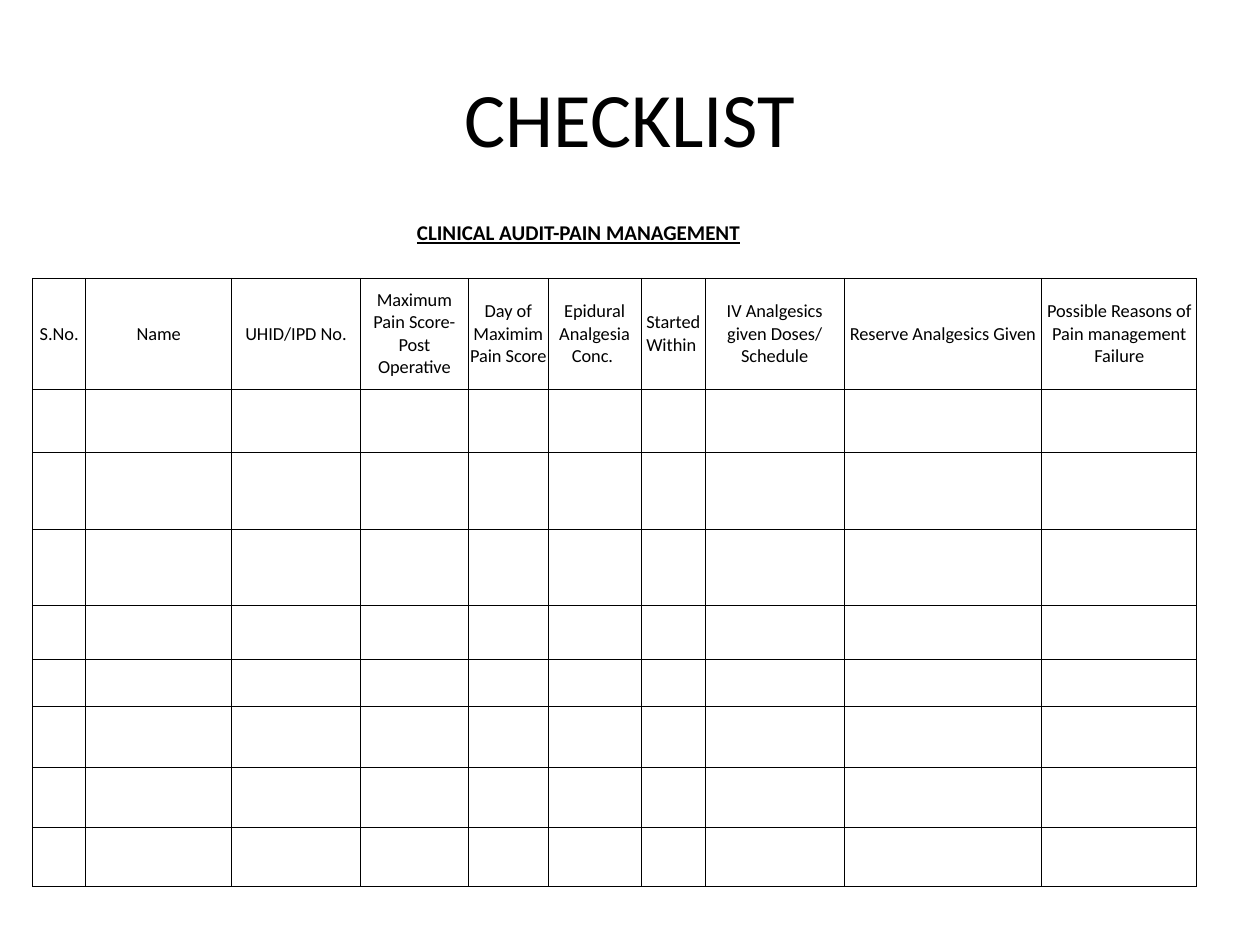
from lxml import etree
from pptx import Presentation
from pptx.dml.color import RGBColor
from pptx.enum import text
from pptx.oxml.ns import qn
from pptx.util import Inches, Pt

FONT = "Calibri"
BLACK = "000000"
NO_STYLE = "{2D5ABB26-0587-4C30-8999-92F81FD0307C}"

HEADINGS = [
    "S.No.", "Name", "UHID/IPD No.", "Maximum Pain Score-Post Operative",
    "Day of Maximim Pain Score", "Epidural Analgesia Conc. ", "Started Within ",
    "IV Analgesics given Doses/ Schedule", "Reserve Analgesics Given",
    "Possible Reasons of Pain management Failure",
]
COLUMN_WIDTHS = [0.42, 1.16, 1.02, 0.86, 0.63, 0.74, 0.51, 1.1, 1.57, 1.23]

# Row height and the sides that carry a line (Left, Right, Top, Bottom)
SPLIT_ENTRY = [(0.22, "LRT"), (0.22, "LR"), (0.17, "LRB")]
ROWS = (
    [(0.17, ""), (0.27, ""), (0.22, "B"), (0.88, "LRTB"), (0.5, "LRTB")]
    + SPLIT_ENTRY * 2
    + [(height, "LRTB") for height in (0.43, 0.37, 0.48, 0.48, 0.47)]
)
CAPTION_ROW, HEADING_ROW = 1, 3


def color(hex_value):
    return RGBColor.from_string(hex_value)


def add_run(paragraph, words, size, bold=False, underline=False):
    run = paragraph.add_run()
    run.text = words
    run.font.name = FONT
    run.font.size = Pt(size)
    run.font.bold = bold
    run.font.underline = underline
    run.font.color.rgb = color(BLACK)


def add_title(slide, words):
    title = slide.shapes.add_textbox(Inches(0.5), Inches(0.3), Inches(9), Inches(1.25))
    frame = title.text_frame
    frame.word_wrap = True
    frame.vertical_anchor = text.MSO_ANCHOR.MIDDLE
    frame.paragraphs[0].alignment = text.PP_ALIGN.CENTER
    add_run(frame.paragraphs[0], words, 44)


def set_borders(cell, sides):
    properties = cell._tc.get_or_add_tcPr()
    for side in "LRTB":
        line = etree.SubElement(properties, qn("a:ln" + side), w=str(Pt(0.5)))
        if side in sides:
            fill = etree.SubElement(line, qn("a:solidFill"))
            etree.SubElement(fill, qn("a:srgbClr"), val=BLACK)
        else:
            etree.SubElement(line, qn("a:noFill"))


def format_cell(cell, sides):
    cell.margin_left = cell.margin_right = cell.margin_top = cell.margin_bottom = 0
    cell.vertical_anchor = text.MSO_ANCHOR.MIDDLE
    set_borders(cell, sides)
    cell.fill.background()
    # Small type keeps empty rows from growing
    etree.SubElement(cell.text_frame.paragraphs[0]._p, qn("a:endParaRPr"), sz="800")


def add_checklist(slide):
    frame = slide.shapes.add_table(
        len(ROWS), len(COLUMN_WIDTHS), Inches(0.26), Inches(1.55),
        Inches(sum(COLUMN_WIDTHS)), Inches(sum(height for height, _ in ROWS)))
    checklist = frame.table
    checklist.first_row = checklist.horz_banding = False
    checklist._tbl.tblPr.find(qn("a:tableStyleId")).text = NO_STYLE

    for column, width in zip(checklist.columns, COLUMN_WIDTHS):
        column.width = Inches(width)
    for row, (height, sides) in zip(checklist.rows, ROWS):
        row.height = Inches(height)
        for cell in row.cells:
            format_cell(cell, sides)

    # Merged cells above the headings
    for row, first, last in ((0, 0, 9), (CAPTION_ROW, 3, 7), (CAPTION_ROW, 8, 9)):
        checklist.cell(row, first).merge(checklist.cell(row, last))

    # Caption
    caption = checklist.cell(CAPTION_ROW, 3)
    caption.margin_left = Inches(0.45)
    add_run(caption.text_frame.paragraphs[0], "CLINICAL AUDIT-PAIN MANAGEMENT",
            12, bold=True, underline=True)

    # Column headings
    for index, heading in enumerate(HEADINGS):
        paragraph = checklist.cell(HEADING_ROW, index).text_frame.paragraphs[0]
        paragraph.alignment = text.PP_ALIGN.CENTER
        add_run(paragraph, heading, 10.5)


def main():
    deck = Presentation()
    deck.slide_width, deck.slide_height = Inches(10), Inches(7.5)
    slide = deck.slides.add_slide(deck.slide_layouts[6])
    add_title(slide, "CHECKLIST")
    add_checklist(slide)
    deck.save("out.pptx")


if __name__ == "__main__":
    main()
